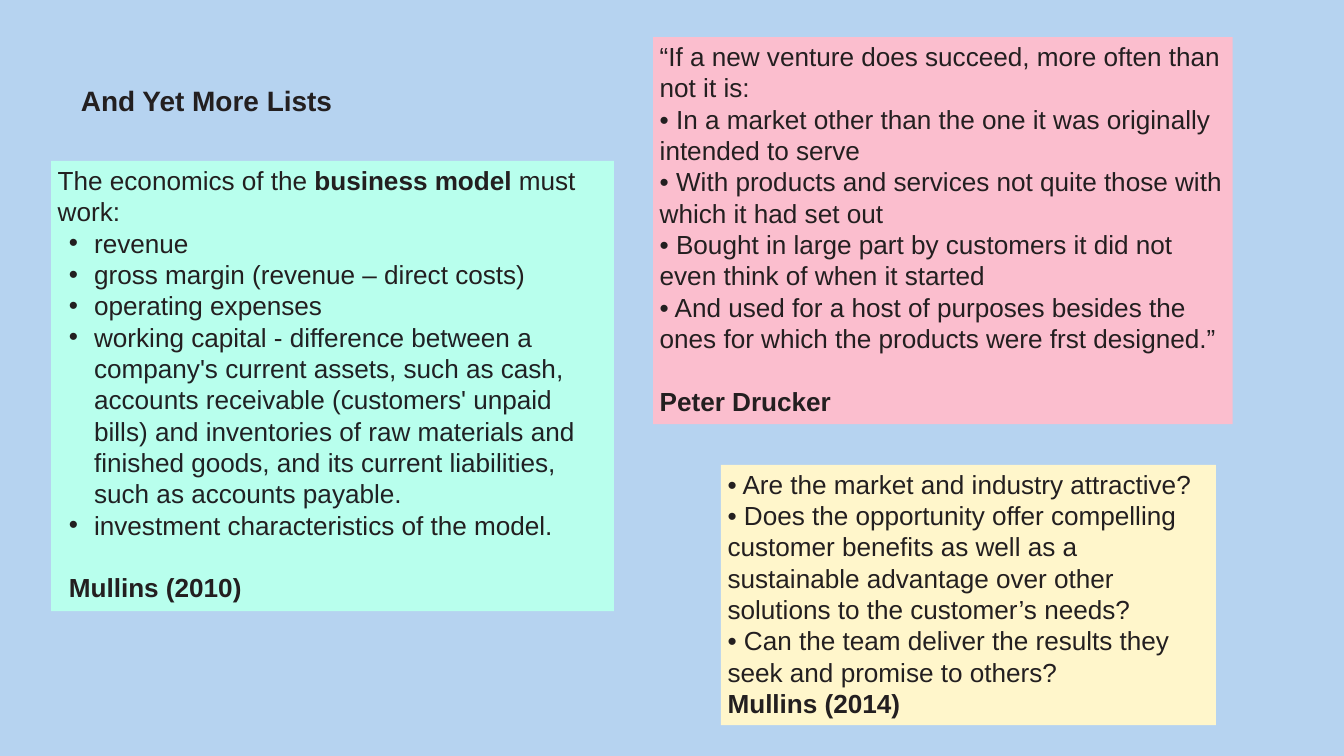
from lxml import etree
from pptx import Presentation
from pptx import util as u
from pptx.dml.color import RGBColor
from pptx.enum import shapes, text
from pptx.oxml.ns import qn

PX = 9525  # EMU in one px, 96 px to the inch
INK, GREY = "231F20", "202124"
LINE = u.Pt(33.6)


def paint(fill, hue):
    fill.solid()
    fill.fore_color.rgb = RGBColor.from_string(hue)


def write(para, runs, size=28):
    """Add runs given as (words, bold, colour)."""
    for words, bold, hue in runs:
        run = para.add_run()
        run.text = words
        run.font.name = "Arial"
        run.font.size = u.Pt(size)
        run.font.bold = bold
        paint(run.font.fill, hue)


deck = Presentation()
deck.slide_width, deck.slide_height = 1920 * PX, 1080 * PX
slide = deck.slides.add_slide(deck.slide_layouts[6])
paint(slide.background.fill, "B6D3F0")

title = slide.shapes.add_textbox(106 * PX, 112 * PX, 1710 * PX, 60 * PX)
frame = title.text_frame
frame.word_wrap = True
frame.vertical_anchor = text.MSO_ANCHOR.BOTTOM
frame.paragraphs[0].line_spacing = 0.9
write(frame.paragraphs[0], [("And Yet More Lists", True, INK)], 30)

drucker = [
    "“If a new venture does succeed, more often than not it is:",
    "• In a market other than the one it was originally intended to serve",
    "• With products and services not quite those with which it had set out",
    "• Bought in large part by customers it did not even think of when it started",
    "• And used for a host of purposes besides the ones for which the products "
    "were frst designed.”",
]
tests = [
    "• Are the market and industry attractive?",
    "• Does the opportunity offer compelling customer benefits as well as a "
    "sustainable advantage over other solutions to the customer’s needs?",
    "• Can the team deliver the results they seek and promise to others?",
]
intro = [
    ("The economics of the ", False, INK),
    ("business model ", True, INK),
    ("must work:", False, INK),
]
capital = [
    ("working capital - ", False, INK),
    ("difference between a company's current assets, such as cash, accounts "
     "receivable (customers' unpaid bills) and inventories of raw materials and "
     "finished goods, and its current liabilities, such as accounts payable.",
     False, GREY),
]
revenue, margin, costs, traits = [
    [(words, False, INK)] for words in (
        "revenue",
        "gross margin (revenue – direct costs)",
        "operating expenses",
        "investment characteristics of the model.",
    )
]

# place, fill, plain lines, bulleted lines, author, author's indent, gap above author
boxes = [
    ((933, 53, 828, 553), "FBBECE", [[(line, False, INK)] for line in drucker],
     [], "Peter Drucker", 0, LINE),
    ((1030, 664, 707, 372), "FFF6CB", [[(line, False, INK)] for line in tests],
     [], "Mullins (2014)", 0, 0),
    ((73, 230, 804, 643), "B8FFED", [intro],
     [revenue, margin, costs, capital, traits], "Mullins (2010)", 16, LINE),
]

for place, hue, plain, points, author, inset, gap in boxes:
    box = slide.shapes.add_shape(shapes.MSO_SHAPE.RECTANGLE, *[n * PX for n in place])
    box.shadow.inherit = False
    paint(box.fill, hue)
    box.line.fill.background()
    frame = box.text_frame
    frame.word_wrap = True
    frame.vertical_anchor = text.MSO_ANCHOR.TOP

    lines = plain + points + [[(author, True, INK)]]
    for i, runs in enumerate(lines):
        para = frame.add_paragraph() if i else frame.paragraphs[0]
        para.alignment = text.PP_ALIGN.LEFT
        para.line_spacing = LINE
        props = para._p.get_or_add_pPr()
        if i == len(lines) - 1:
            props.set("marL", str(inset * PX))
            para.space_before = gap
        elif i >= len(plain):
            props.set("marL", str(52 * PX))
            props.set("indent", str(-36 * PX))
            etree.SubElement(props, qn("a:buFont"), typeface="Arial")
            etree.SubElement(props, qn("a:buChar"), char="•")
        write(para, runs)

deck.save("out.pptx")
